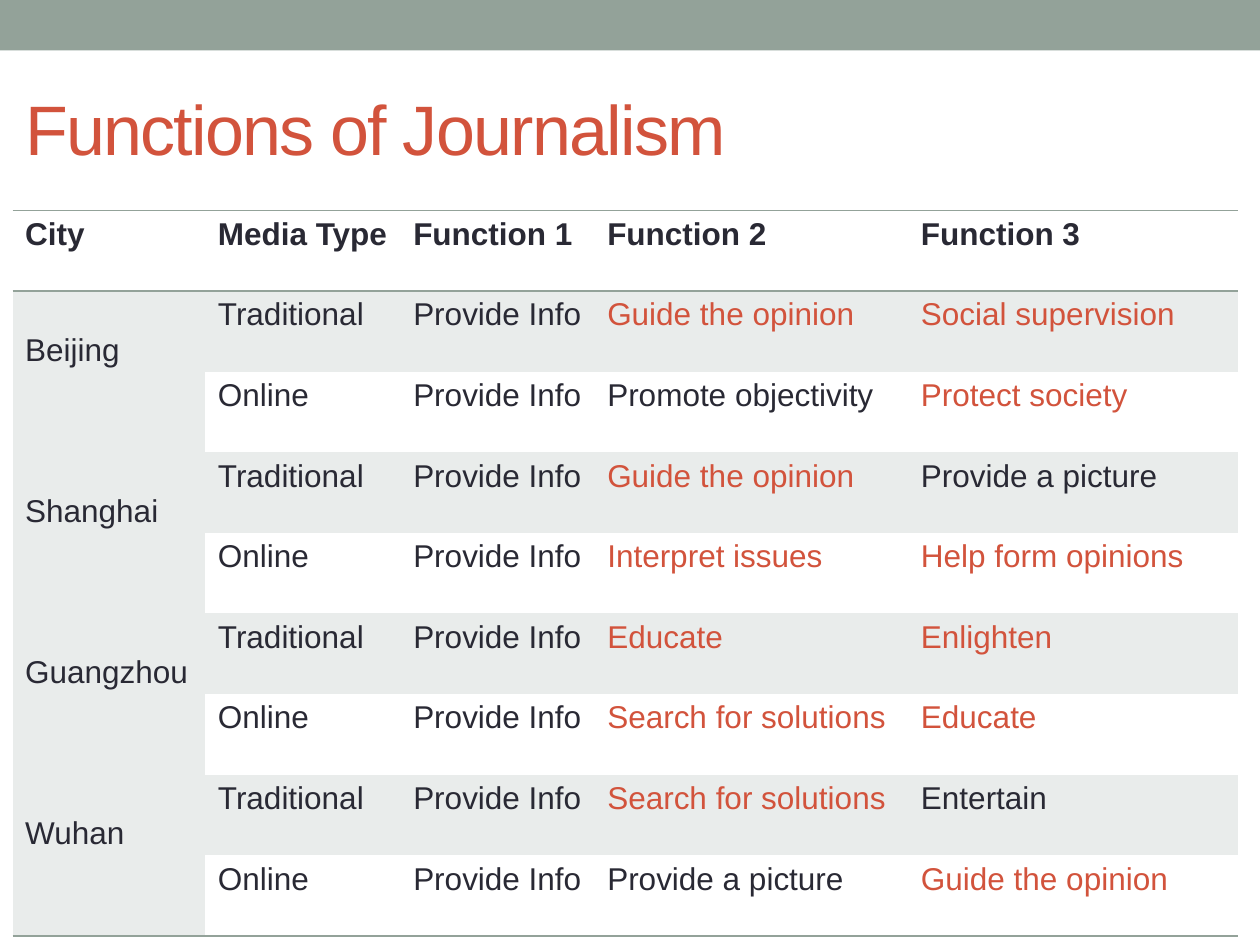
from lxml import etree
from pptx import Presentation, util as u
from pptx.dml.color import RGBColor
from pptx.enum import shapes, text
from pptx.oxml import ns

SAGE = RGBColor(0x93, 0xA2, 0x99)
PALE_SAGE = RGBColor(0xE9, 0xEC, 0xEB)
RUST = RGBColor(0xD2, 0x53, 0x3C)
INK = RGBColor(0x29, 0x29, 0x34)
FONT = "Arial"
NO_STYLE = "{2D5ABB26-0587-4C30-8999-92F81FD0307C}"

HEADINGS = ["City", "Media Type", "Function 1", "Function 2", "Function 3"]
COLUMN_WIDTHS = [1.53, 1.55, 1.54, 2.49, 2.62]
ROW_HEIGHT = 0.64
CITY_DROP = 0.33  # top margin that lowers a city name by one line

# City: functions 2 and 3 for traditional, then for online media
CITIES = {
    "Beijing": [("Guide the opinion", "Social supervision"),
                ("Promote objectivity", "Protect society")],
    "Shanghai": [("Guide the opinion", "Provide a picture"),
                 ("Interpret issues", "Help form opinions")],
    "Guangzhou": [("Educate", "Enlighten"),
                  ("Search for solutions", "Educate")],
    "Wuhan": [("Search for solutions", "Entertain"),
              ("Provide a picture", "Guide the opinion")],
}
MEDIA_TYPES = ["Traditional", "Online"]
PLAIN_FUNCTIONS = {"Promote objectivity", "Provide a picture", "Entertain"}


def format_runs(paragraph, size, color, bold=False):
    for run in paragraph.runs:
        run.font.name = FONT
        run.font.size = u.Pt(size)
        run.font.bold = bold
        run.font.color.rgb = color


def add_band(slide, left, top, width, height):
    band = slide.shapes.add_shape(
        shapes.MSO_SHAPE.RECTANGLE, *map(u.Inches, (left, top, width, height)))
    band.shadow.inherit = False
    band.fill.solid()
    band.fill.fore_color.rgb = SAGE
    band.line.fill.background()


def place_title(slide, left, top, width, height):
    title = slide.shapes.title
    title.left, title.top, title.width, title.height = map(
        u.Inches, (left, top, width, height))
    frame = title.text_frame
    frame.text = "Functions of Journalism"
    frame.vertical_anchor = text.MSO_ANCHOR.MIDDLE
    paragraph = frame.paragraphs[0]
    paragraph.alignment = text.PP_ALIGN.LEFT
    format_runs(paragraph, 40, RUST)
    for run in paragraph.runs:
        run.font._element.set("spc", "-100")


def add_border(cell, side):
    properties = cell._tc.get_or_add_tcPr()
    line = etree.SubElement(properties, ns.qn(f"a:ln{side}"), w=str(u.Pt(1)))
    fill = etree.SubElement(line, ns.qn("a:solidFill"))
    etree.SubElement(fill, ns.qn("a:srgbClr"), val=str(SAGE))


def fill_cell(cell, words, color=INK, bold=False, shaded=False, borders=""):
    cell.text_frame.text = words
    format_runs(cell.text_frame.paragraphs[0], 18, color, bold)
    for side in borders:
        add_border(cell, side)
    if shaded:
        cell.fill.solid()
        cell.fill.fore_color.rgb = PALE_SAGE
    else:
        cell.fill.background()


def add_functions_table(slide, left, top):
    row_count = 1 + len(CITIES) * len(MEDIA_TYPES)
    frame = slide.shapes.add_table(
        row_count, len(HEADINGS), u.Inches(left), u.Inches(top),
        u.Inches(sum(COLUMN_WIDTHS)), u.Inches(ROW_HEIGHT * row_count))
    table = frame.table
    table._tbl.tblPr.find(ns.qn("a:tableStyleId")).text = NO_STYLE
    table.first_row = table.horz_banding = False
    for column, width in zip(table.columns, COLUMN_WIDTHS):
        column.width = u.Inches(width)
    for row in table.rows:
        row.height = u.Inches(ROW_HEIGHT)

    # Heading row
    for column, heading in enumerate(HEADINGS):
        fill_cell(table.cell(0, column), heading, bold=True, borders="TB")

    # One block of rows per city
    span = len(MEDIA_TYPES)
    for block, (city, functions) in enumerate(CITIES.items()):
        first = 1 + block * span
        last = first + span - 1
        bottom = "B" if last == row_count - 1 else ""
        city_cell = table.cell(first, 0)
        city_cell.merge(table.cell(last, 0))
        fill_cell(city_cell, city, shaded=True, borders=bottom)
        fill_cell(table.cell(last, 0), "", shaded=True, borders=bottom)
        city_cell.margin_top = u.Inches(CITY_DROP)

        for offset, media in enumerate(MEDIA_TYPES):
            row = first + offset
            entries = [media, "Provide Info", *functions[offset]]
            for column, words in enumerate(entries, start=1):
                plain = column < 3 or words in PLAIN_FUNCTIONS
                fill_cell(table.cell(row, column), words,
                          color=INK if plain else RUST, shaded=offset == 0,
                          borders=bottom if row == last else "")


def main():
    presentation = Presentation()
    presentation.slide_width = u.Inches(10)
    presentation.slide_height = u.Inches(7.5)
    slide = presentation.slides.add_slide(presentation.slide_layouts[5])
    add_band(slide, 0, 0, 10, 0.4)
    place_title(slide, 0.1, 0.47, 9, 1.08)
    add_functions_table(slide, 0.1, 1.67)
    presentation.save("out.pptx")


if __name__ == "__main__":
    main()
